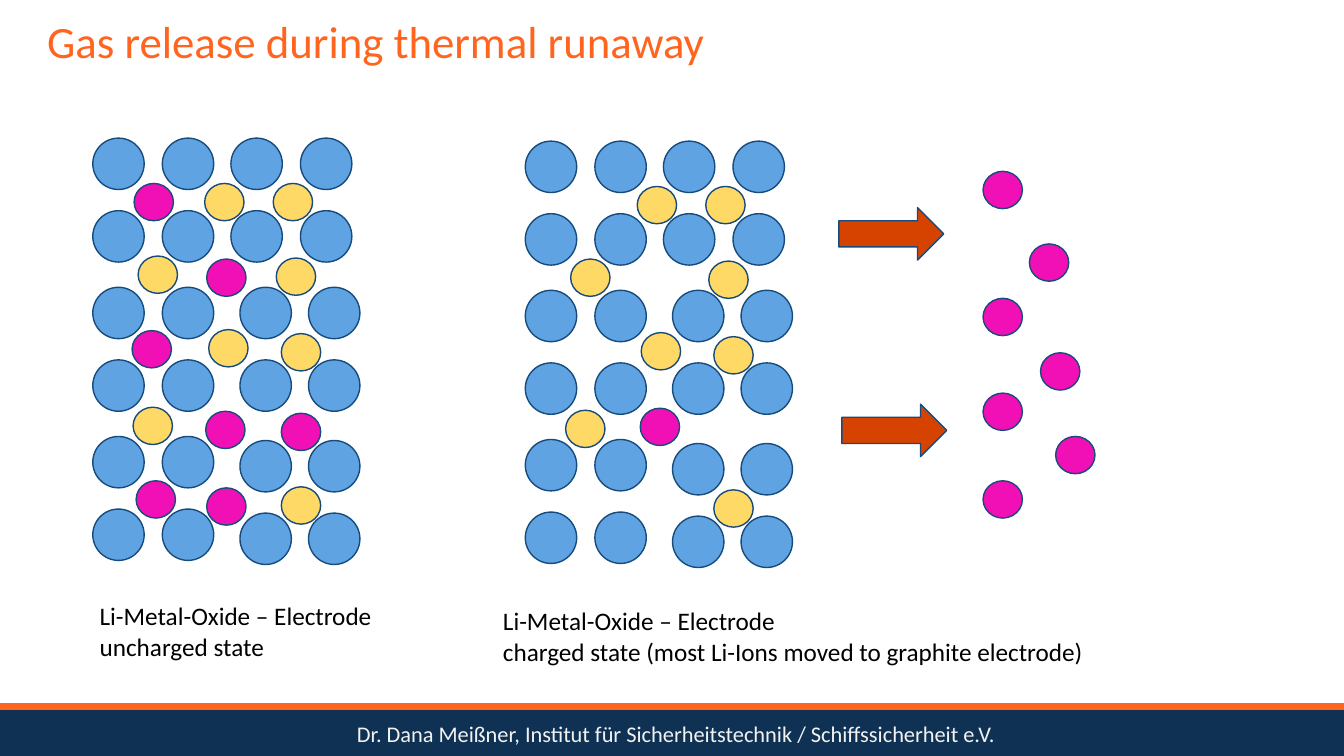
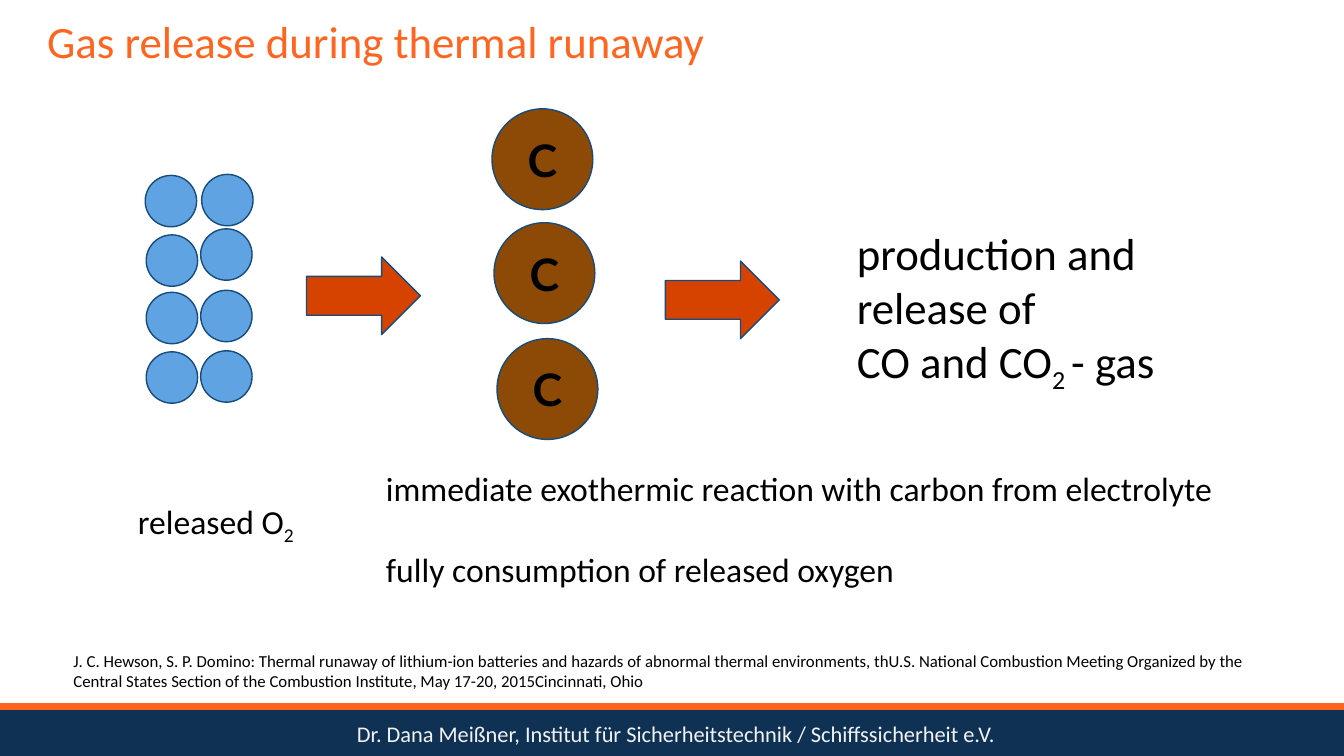
import pptx
import pptx.util
import pptx.dml.color
import pptx.enum.shapes
import pptx.enum.text
import pptx.oxml.ns
from lxml import etree

SHAPE = pptx.enum.shapes.MSO_SHAPE
ALIGN = pptx.enum.text.PP_ALIGN
ANCHOR = pptx.enum.text.MSO_ANCHOR
Inches, Pt = pptx.util.Inches, pptx.util.Pt

WIDTH, HEIGHT = 13.33, 7.5
BAND_TOP = 7.01
COLORS = {
    "orange": "FF651F", "navy": "0F3254", "footer": "F2F2F2", "text": "000000",
    "outline": "164B7C", "oxygen": "60A3E3", "lithium": "F10FB6",
    "metal": "FFD966", "arrow": "D64300", "carbon": "8C4A06",
}
TITLE = "Gas release during thermal runaway"
FOOTER = "Dr. Dana Meißner, Institut für Sicherheitstechnik / Schiffssicherheit e.V."

OXYGEN_SIZE = (0.51, 0.51)
ION_SIZE = (0.39, 0.37)
CARBON_SIZE = (1, 1)

# Electrode lattice: everything is an offset from the lattice's top left corner.
LATTICE_ROWS = (0, 0.72, 1.48, 2.2, 2.96, 3.68)
COLUMNS_TOP = (0, 0.69, 1.37, 2.06)
COLUMNS_SHIFTED = (0, 0.69, 1.46, 2.14)   # from the third row down
RIGHT_HALF_DROP = 0.04                    # last two rows
METAL_IONS = [(1.11, 0.45), (1.79, 0.45), (0.45, 1.17), (1.82, 1.19), (1.15, 1.9),
              (1.87, 1.94), (0.4, 2.67), (1.87, 3.46)]
ELECTRODES = [
    {"origin": (0.92, 1.37), "label_at": (0.89, 5.91, 2.93, 0.71),
     "label": ["Li-Metal-Oxide – Electrode", "uncharged state"],
     "lithium": [(0.41, 0.45), (1.13, 1.2), (0.39, 1.91), (1.12, 2.71),
                 (1.87, 2.73), (0.43, 3.4), (1.13, 3.47)]},
    {"origin": (5.21, 1.4), "label_at": (4.89, 5.96, 6, 0.71),
     "label": ["Li-Metal-Oxide – Electrode",
               "charged state (most Li-Ions moved to graphite electrode)"],
     "lithium": [(1.14, 2.65)]},
]
MOVED_LITHIUM = [(9.75, 1.7), (10.21, 2.42), (9.75, 2.96), (10.32, 3.5),
                 (9.75, 3.9), (10.47, 4.33), (9.75, 4.77)]
LITHIUM_ARROWS = [(8.32, 2.06), (8.35, 4.01)]

RELEASED_OXYGEN = [(1.44, 1.74), (1.45, 2.33), (1.45, 2.9), (1.45, 3.49),
                   (2, 1.73), (1.99, 2.27), (1.99, 2.88), (1.99, 3.48)]
CARBON_ATOMS = [(4.88, 1.08), (4.9, 2.21), (4.93, 3.36)]
REACTION_ARROWS = [(3.04, 2.55), (6.6, 2.59)]
# A paragraph is a string, or a list of runs where (text,) is a subscript.
REACTION_TEXTS = [
    ((1.27, 4.92, 1.9, 0.5), [["released O", ("2",)]], {"size": 24}),
    ((3.73, 4.59, 8.66, 1.31),
     ["immediate exothermic reaction with carbon from electrolyte",
      "fully consumption of released oxygen"], {"size": 24, "gap": 29.3}),
    ((8.4, 2.19, 3.36, 1.72),
     ["production and release of", ["CO and CO", ("2 ",), "- gas"]], {"size": 32}),
    ((0.63, 6.41, 12.22, 0.5),
     ["J. C. Hewson, S. P. Domino: Thermal runaway of lithium-ion batteries and "
      "hazards of abnormal thermal environments, thU.S. National Combustion Meeting "
      "Organized by the Central States Section of the Combustion Institute, "
      "May 17-20, 2015Cincinnati, Ohio"], {"size": 12}),
]


def rgb(name):
    return pptx.dml.color.RGBColor.from_string(COLORS[name])


def write(tf, paragraphs, size=18, color="text", font="Calibri", bold=False,
          align=ALIGN.LEFT, anchor=ANCHOR.TOP, wrap=True, spacing=None, gap=0):
    """Fill a text frame; gap is the space in points between paragraphs."""
    tf.word_wrap = wrap
    tf.vertical_anchor = anchor
    for i, runs in enumerate(paragraphs):
        p = tf.paragraphs[0] if i == 0 else tf.add_paragraph()
        p.alignment = align
        if spacing:
            p.line_spacing = spacing
        if i and gap:
            p.space_before = Pt(gap)
        for run in [runs] if isinstance(runs, str) else runs:
            r = p.add_run()
            r.font.size, r.font.name, r.font.bold = Pt(size), font, bold
            r.font.color.rgb = rgb(color)
            if isinstance(run, tuple):
                r.text = run[0]
                r._r.get_or_add_rPr().set("baseline", "-25000")
            else:
                r.text = run


def add_text(s, box, paragraphs, **style):
    write(s.shapes.add_textbox(*map(Inches, box)).text_frame, paragraphs, **style)


def add_shape(s, kind, at, size, fill, outline="outline"):
    sp = s.shapes.add_shape(kind, *map(Inches, (*at, *size)))
    sp.shadow.inherit = False
    sp.fill.solid()
    sp.fill.fore_color.rgb = rgb(fill)
    if outline:
        sp.line.color.rgb = rgb(outline)
        sp.line.width = Pt(1)
    else:
        sp.line.fill.background()
    return sp


def add_all(s, kind, places, size, fill, origin=(0, 0)):
    return [add_shape(s, kind, (origin[0] + x, origin[1] + y), size, fill)
            for x, y in places]


def lattice_places():
    for row, y in enumerate(LATTICE_ROWS):
        for col, x in enumerate(COLUMNS_TOP if row < 2 else COLUMNS_SHIFTED):
            yield x, y + (RIGHT_HALF_DROP if row >= 4 and col >= 2 else 0)


def add_base_slide(prs):
    """Add a blank slide with the footer band, its rule and the title."""
    s = prs.slides.add_slide(prs.slide_layouts[6])
    add_shape(s, SHAPE.RECTANGLE, (0, BAND_TOP), (WIDTH, HEIGHT - BAND_TOP),
              "navy", outline=None)
    rule = s.shapes.add_connector(pptx.enum.shapes.MSO_CONNECTOR.STRAIGHT,
                                  *map(Inches, (0, BAND_TOP, WIDTH, BAND_TOP)))
    rule.line.color.rgb = rgb("orange")
    rule.line.width = Pt(4.5)
    etree.SubElement(rule._element.spPr, pptx.oxml.ns.qn("a:effectLst"))
    add_text(s, (3.44, 7.1, 6.61, 0.37), [FOOTER], size=16, color="footer", wrap=False)
    add_text(s, (0.37, 0.1, 12.6, 0.67), [TITLE], size=32, color="orange",
             anchor=ANCHOR.MIDDLE, spacing=0.9)
    return s


def add_electrode_slide(prs):
    s = add_base_slide(prs)
    for electrode in ELECTRODES:
        origin = electrode["origin"]
        add_all(s, SHAPE.OVAL, lattice_places(), OXYGEN_SIZE, "oxygen", origin)
        add_all(s, SHAPE.OVAL, electrode["lithium"], ION_SIZE, "lithium", origin)
        add_all(s, SHAPE.OVAL, METAL_IONS, ION_SIZE, "metal", origin)
        add_text(s, electrode["label_at"], electrode["label"], wrap=False)
    add_all(s, SHAPE.OVAL, MOVED_LITHIUM, ION_SIZE, "lithium")
    add_all(s, SHAPE.RIGHT_ARROW, LITHIUM_ARROWS, (1.04, 0.52), "arrow")


def add_reaction_slide(prs):
    s = add_base_slide(prs)
    add_all(s, SHAPE.OVAL, RELEASED_OXYGEN, OXYGEN_SIZE, "oxygen")
    add_all(s, SHAPE.RIGHT_ARROW, REACTION_ARROWS, (1.13, 0.77), "arrow")
    for sp in add_all(s, SHAPE.OVAL, CARBON_ATOMS, CARBON_SIZE, "carbon"):
        write(sp.text_frame, ["C"], size=32, font="Lato", bold=True,
              align=ALIGN.CENTER, anchor=ANCHOR.MIDDLE)
    for box, paragraphs, style in REACTION_TEXTS:
        add_text(s, box, paragraphs, **style)


def main():
    prs = pptx.Presentation()
    prs.slide_width, prs.slide_height = Inches(WIDTH), Inches(HEIGHT)
    add_electrode_slide(prs)
    add_reaction_slide(prs)
    prs.save("out.pptx")


if __name__ == "__main__":
    main()
